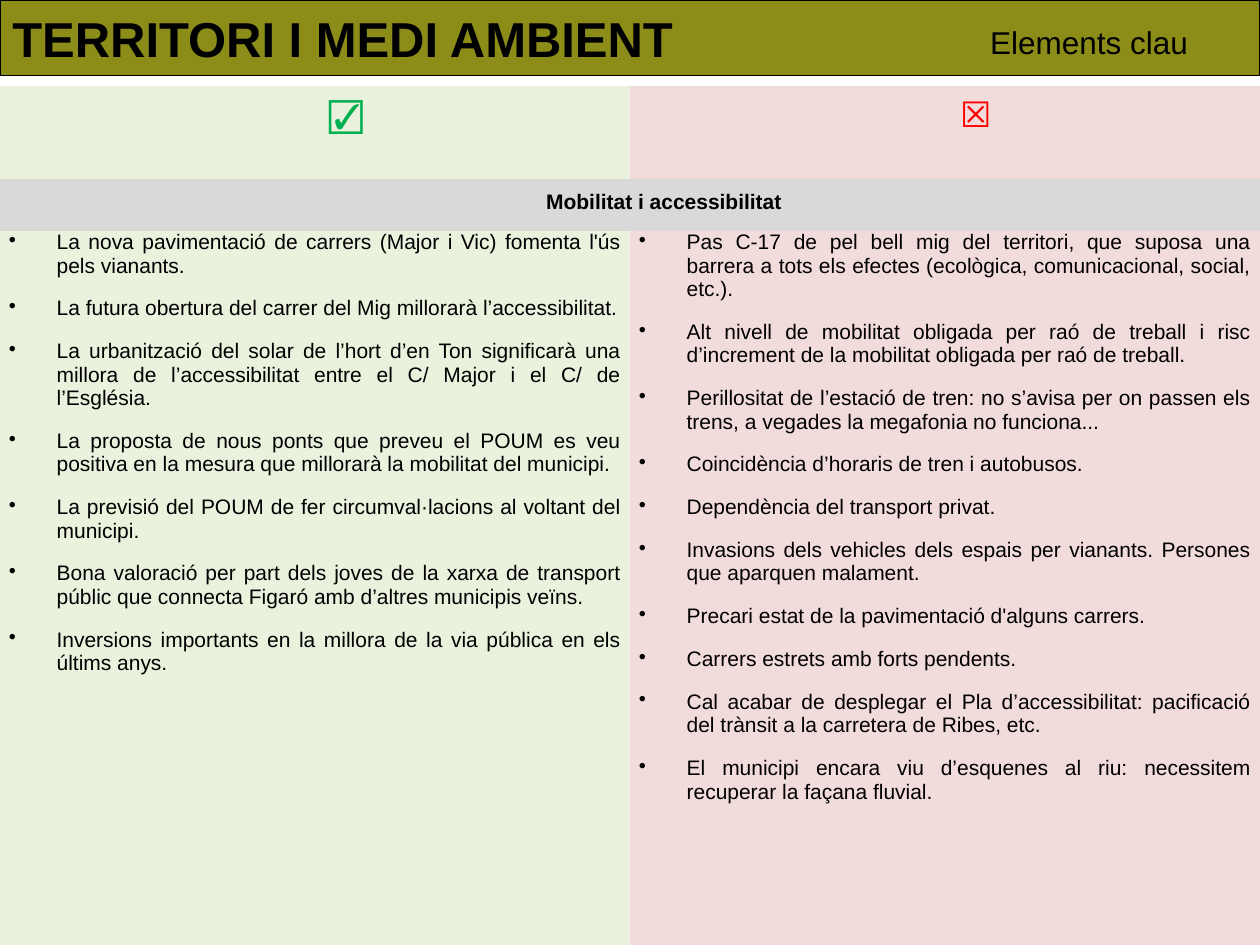
"""Builds the key-elements slide on territory, mobility and accessibility."""
from pptx import Presentation
from pptx.dml.color import RGBColor
from pptx.enum.shapes import MSO_SHAPE as SHAPE
from pptx.enum.text import MSO_ANCHOR as ANCHOR, MSO_AUTO_SIZE as AUTO, PP_ALIGN as ALIGN
from pptx.oxml.ns import qn
from pptx.util import Inches, Pt
from lxml.etree import SubElement

BLACK = RGBColor(0x00, 0x00, 0x00)
OLIVE = RGBColor(0x80, 0x80, 0x00)
GREEN = RGBColor(0x00, 0xB0, 0x50)
RED = RGBColor(0xFF, 0x00, 0x00)
PALE_GREEN = RGBColor(0xEA, 0xF1, 0xDD)
PALE_RED = RGBColor(0xF2, 0xDB, 0xDB)
GREY = RGBColor(0xD9, 0xD9, 0xD9)
NO_STYLE = "{2D5ABB26-0587-4C30-8999-92F81FD0307C}"

TITLE = "TERRITORI I MEDI AMBIENT"
SUBTITLE = "Elements clau"
SECTION = "Mobilitat i accessibilitat"
STRENGTHS = [
    "La nova pavimentació de carrers (Major i Vic) fomenta l'ús pels vianants.",
    "La futura obertura del carrer del Mig millorarà l’accessibilitat.",
    "La urbanització del solar de l’hort d’en Ton significarà una millora de "
    "l’accessibilitat entre el C/ Major i el C/ de l’Església.",
    "La proposta de nous ponts que preveu el POUM es veu positiva en la mesura "
    "que millorarà la mobilitat del municipi.",
    "La previsió del POUM de fer circumval·lacions al voltant del municipi.",
    "Bona valoració per part dels joves de la xarxa de transport públic que "
    "connecta Figaró amb d’altres municipis veïns.",
    "Inversions importants en la millora de la via pública en els últims anys.",
]
WEAKNESSES = [
    "Pas C-17 de pel bell mig del territori, que suposa una barrera a tots els "
    "efectes (ecològica, comunicacional, social, etc.).",
    "Alt nivell de mobilitat obligada per raó de treball i risc d’increment de "
    "la mobilitat obligada per raó de treball.",
    "Perillositat de l’estació de tren: no s’avisa per on passen els trens, a "
    "vegades la megafonia no funciona...",
    "Coincidència d’horaris de tren i autobusos.",
    "Dependència del transport privat.",
    "Invasions dels vehicles dels espais per vianants. Persones que aparquen malament.",
    "Precari estat de la pavimentació d'alguns carrers.",
    "Carrers estrets amb forts pendents.",
    "Cal acabar de desplegar el Pla d’accessibilitat: pacificació del trànsit a "
    "la carretera de Ribes, etc.",
    "El municipi encara viu d’esquenes al riu: necessitem recuperar la façana fluvial.",
]
COLUMNS = [
    ("☑", GREEN, PALE_GREEN, STRENGTHS),
    ("☒", RED, PALE_RED, WEAKNESSES),
]
ROW_HEIGHTS = [0.74, 0.41, 5.67]


def add_run(p, text, size, color=BLACK, bold=False, font="Arial"):
    r = p.add_run()
    r.text = text
    r.font.size, r.font.bold, r.font.name = Pt(size), bold, font
    r.font.color.rgb = color


def set_indent(p, left, first):
    pPr = p._p.get_or_add_pPr()
    pPr.set("marL", str(Inches(left)))
    pPr.set("indent", str(Inches(first)))
    return pPr


def style_cell(cell, color):
    cell.fill.solid()
    cell.fill.fore_color.rgb = color
    cell.margin_left = cell.margin_right = Inches(0.07)
    cell.margin_top = cell.margin_bottom = 0


def add_heading(cell, left):
    p = cell.text_frame.paragraphs[0]
    p.alignment, p.line_spacing = ALIGN.CENTER, 1.5
    set_indent(p, left, 0.49)
    return p


def add_bullets(tf, items):
    for i, item in enumerate(items):
        p = tf.add_paragraph() if i else tf.paragraphs[0]
        p.alignment = ALIGN.JUSTIFY
        p.space_before, p.space_after = Pt(5), Pt(6)
        pPr = set_indent(p, 0.38, -0.38)
        SubElement(pPr, qn("a:buChar")).set("char", "•")
        add_run(p, item, 12)


def add_table(s):
    frame = s.shapes.add_table(3, 2, 0, Inches(0.68), Inches(10), Inches(sum(ROW_HEIGHTS)))
    next(frame.element.iter(qn("a:tableStyleId"))).text = NO_STYLE
    table = frame.table
    table.first_row = table.horz_banding = False
    for row, height in zip(table.rows, ROW_HEIGHTS):
        row.height = Inches(height)
    for col, (mark, color, fill, items) in enumerate(COLUMNS):
        top, middle, body = (table.cell(row, col) for row in range(3))
        for cell, shade in ((top, fill), (middle, GREY), (body, fill)):
            style_cell(cell, shade)
        add_run(add_heading(top, 0), mark, 20, color, font="Arial Narrow")
        add_bullets(body.text_frame, items)
    section = table.cell(1, 0)
    section.merge(table.cell(1, 1))
    p = add_heading(section, 0.05)
    p.space_before = Pt(5)
    add_run(p, SECTION, 12, bold=True)


def add_banner(s):
    sp = s.shapes.add_shape(SHAPE.RECTANGLE, 0, 0, Inches(10), Inches(0.6))
    sp.shadow.inherit = False
    sp.fill.solid()
    sp.fill.fore_color.rgb = OLIVE
    olive = next(sp.element.spPr.iter(qn("a:srgbClr")))
    SubElement(olive, qn("a:alpha")).set("val", "90000")
    sp.line.color.rgb, sp.line.width = BLACK, Pt(0.75)
    tf = sp.text_frame
    tf.word_wrap, tf.vertical_anchor = False, ANCHOR.MIDDLE
    p = tf.paragraphs[0]
    p.alignment = ALIGN.LEFT
    add_run(p, TITLE, 28, bold=True)


def add_subtitle(s):
    tf = s.shapes.add_textbox(Inches(7.76), Inches(0.13), Inches(2.24), Inches(0.4)).text_frame
    tf.word_wrap, tf.auto_size = True, AUTO.SHAPE_TO_FIT_TEXT
    add_run(tf.paragraphs[0], SUBTITLE, 18)


def main():
    prs = Presentation()
    prs.slide_width, prs.slide_height = Inches(10), Inches(7.5)
    s = prs.slides.add_slide(prs.slide_layouts[6])
    add_table(s)
    add_banner(s)
    add_subtitle(s)
    prs.save("out.pptx")


if __name__ == "__main__":
    main()
